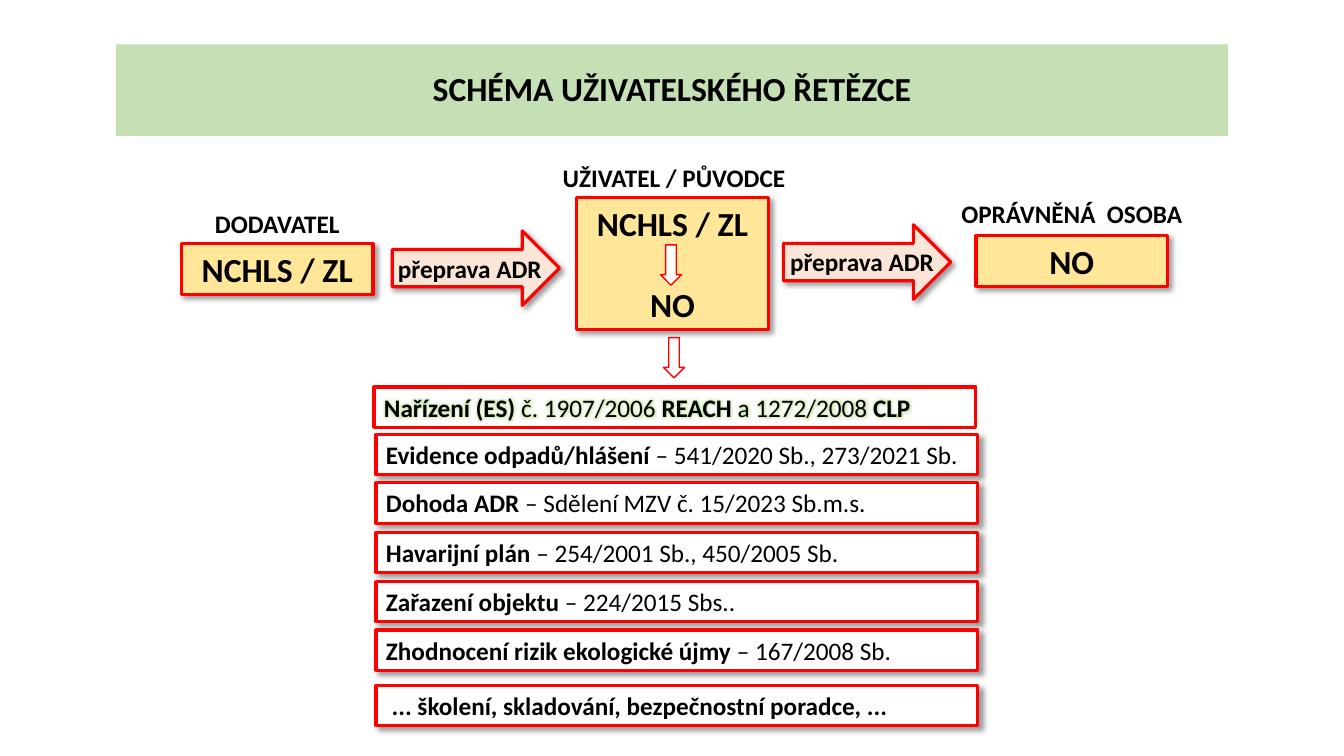
from lxml import etree
from pptx import Presentation
from pptx.dml.color import RGBColor
from pptx.enum import shapes, text
from pptx.oxml import ns
from pptx.util import Inches, Pt

RED = RGBColor(255, 0, 0)
BLACK = RGBColor(0, 0, 0)
WHITE = RGBColor(255, 255, 255)
GREEN = RGBColor(0xC5, 0xE0, 0xB4)
GOLD = RGBColor(0xFF, 0xE6, 0x99)
PEACH = RGBColor(0xFB, 0xE5, 0xD6)
GLOW = RGBColor(0x92, 0xD0, 0x50)

TITLE = "SCHÉMA UŽIVATELSKÉHO ŘETĚZCE"
LABELS = [
    ("DODAVATEL", 1.8, 2.02, 1.9),
    ("UŽIVATEL / PŮVODCE", 5.46, 1.56, 2.45),
    ("OPRÁVNĚNÁ  OSOBA", 9.43, 1.92, 2.4),
    ("přeprava ADR", 3.71, 2.46, 1.9),
    ("přeprava ADR", 7.6, 2.39, 1.9),
]
BOXES = [
    (["NCHLS / ZL"], 1.8, 2.42, 0.5),
    (["NCHLS / ZL", "NO"], 5.72, 1.96, 1.31),
    (["NO"], 9.68, 2.34, 0.5),
]
MOVES = [(3.89, 2.29), (7.77, 2.23)]
DROPS = [(6.55, 2.43), (6.58, 3.35)]
RULES = [
    (3.84, ["Nařízení (ES) ", "č. 1907/2006 ", "REACH ", "a 1272/2008 ", "CLP"]),
    (4.31, ["Evidence odpadů/hlášení ", "– 541/2020 Sb., 273/2021 Sb."]),
    (4.79, ["Dohoda ADR ", "– Sdělení MZV č. 15/2023 Sb.m.s."]),
    (5.28, ["Havarijní plán ", "– 254/2001 Sb., 450/2005 Sb."]),
    (5.77, ["Zařazení objektu ", "– 224/2015 Sbs.."]),
    (6.25, ["Zhodnocení rizik ekologické újmy ", "– 167/2008 Sb."]),
    (6.8, [" ... školení, skladování, bezpečnostní poradce, ..."]),
]

KIND = shapes.MSO_SHAPE
MID = text.PP_ALIGN.CENTER
LEFT = text.PP_ALIGN.LEFT


def effect(name, tint, alpha, **attrs):
    group = etree.Element(ns.qn("a:effectLst"))
    item = etree.SubElement(group, ns.qn("a:" + name), attrs)
    color = etree.SubElement(item, ns.qn("a:srgbClr"), val=str(tint))
    etree.SubElement(color, ns.qn("a:alpha"), val=str(alpha * 1000))
    return group


def shade(shape):
    group = effect("outerShdw", BLACK, 40, blurRad=str(Pt(4)),
                   dist=str(Pt(3)), dir="2700000", algn="tl", rotWithShape="0")
    props = shape._element.spPr
    props.replace(props.find(ns.qn("a:effectLst")), group)


def draw(kind, left, top, width, height, fill, line=2.25, shadow=True):
    shape = slide.shapes.add_shape(kind, *map(Inches, (left, top, width, height)))
    shape.shadow.inherit = False
    shape.fill.solid()
    shape.fill.fore_color.rgb = fill
    shape.line.color.rgb = RED
    shape.line.width = Pt(line)
    if shadow:
        shade(shape)
    return shape


def write(para, parts, size, align=MID):
    para.alignment = align
    for i, part in enumerate(parts):
        run = para.add_run()
        run.text = part
        look = {"size": Pt(size), "name": "Calibri", "bold": i % 2 == 0}
        for key, value in look.items():
            setattr(run.font, key, value)
        run.font.color.rgb = BLACK


deck = Presentation()
deck.slide_width, deck.slide_height = Inches(13.33), Inches(7.5)
slide = deck.slides.add_slide(deck.slide_layouts[5])

title = slide.shapes.title
place = {"left": 1.15, "top": 0.44, "width": 11.03, "height": 0.91}
for key, value in place.items():
    setattr(title, key, Inches(value))
title.fill.solid()
title.fill.fore_color.rgb = GREEN
title.text_frame.auto_size = text.MSO_AUTO_SIZE.NONE
title.text_frame.vertical_anchor = text.MSO_ANCHOR.MIDDLE
head = title.text_frame.paragraphs[0]
head.line_spacing = 0.9
write(head, [TITLE], 24)

for left, top in MOVES:
    draw(KIND.RIGHT_ARROW, left, top, 1.66, 0.74, PEACH)

for lines, left, top, height in BOXES:
    frame = draw(KIND.RECTANGLE, left, top, 1.9, height, GOLD).text_frame
    frame.vertical_anchor = text.MSO_ANCHOR.TOP
    for i, line in enumerate(lines):
        para = frame.add_paragraph() if i else frame.paragraphs[0]
        para.space_before = Pt(29.3 * i)
        write(para, [line], 24)

for label, left, top, width in LABELS:
    box = slide.shapes.add_textbox(*map(Inches, (left, top, width, 0.4)))
    box.text_frame.word_wrap = True
    write(box.text_frame.paragraphs[0], [label], 18)

for left, top in DROPS:
    draw(KIND.DOWN_ARROW, left, top, 0.21, 0.4, WHITE, 1, False)

for i, (top, parts) in enumerate(RULES):
    left = 3.73 if i else 3.71
    row = draw(KIND.RECTANGLE, left, top, 5.97, 0.4, WHITE, shadow=i > 0)
    row.text_frame.vertical_anchor = text.MSO_ANCHOR.TOP
    para = row.text_frame.paragraphs[0]
    write(para, parts, 18, LEFT)
    if i == 0:
        for run in para.runs:
            fill = run.font._element.find(ns.qn("a:solidFill"))
            fill.addnext(effect("glow", GLOW, 40, rad=str(Pt(5))))

deck.save("out.pptx")
